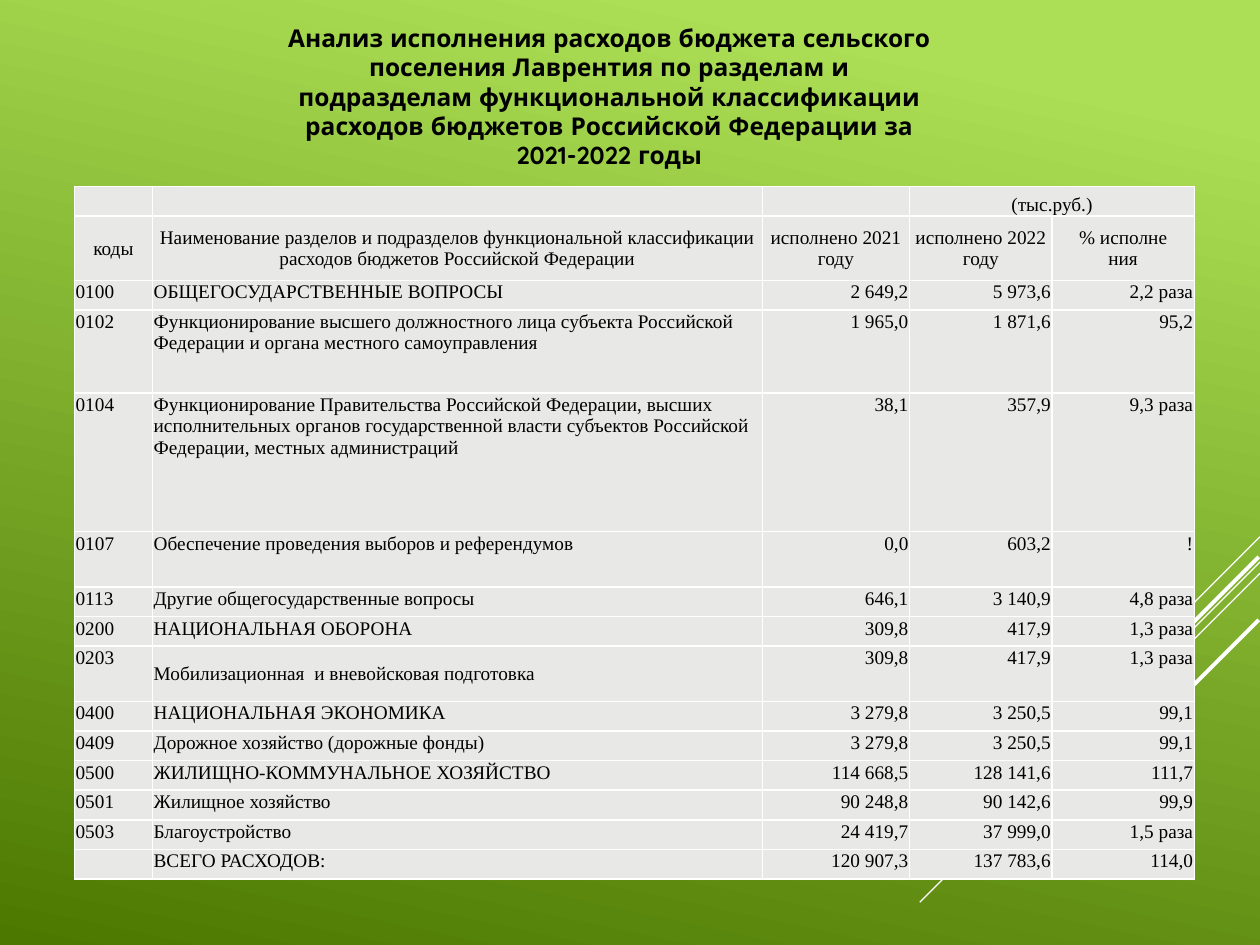
"""Build the budget expenditure slide with its title, diagonal accents and table."""
from dataclasses import dataclass

from lxml import etree
from pptx import Presentation
from pptx.dml.color import RGBColor
from pptx.enum.shapes import MSO_CONNECTOR
from pptx.enum.text import MSO_ANCHOR, MSO_AUTO_SIZE, PP_ALIGN
from pptx.oxml.ns import qn
from pptx.util import Inches, Pt

LEFT, CENTER, RIGHT, JUSTIFY = PP_ALIGN.LEFT, PP_ALIGN.CENTER, PP_ALIGN.RIGHT, PP_ALIGN.JUSTIFY
TOP, MIDDLE, BOTTOM = MSO_ANCHOR.TOP, MSO_ANCHOR.MIDDLE, MSO_ANCHOR.BOTTOM
STRAIGHT = MSO_CONNECTOR.STRAIGHT
GROW = MSO_AUTO_SIZE.SHAPE_TO_FIT_TEXT
TITLE_ONLY = 5
WIDTH, HEIGHT = 10, 7.5


@dataclass(frozen=True)
class Theme:
    light: str = "ACDF55"
    dark: str = "4C7800"
    cell: str = "E8E9E7"
    border: str = "FFFFFF"
    text: str = "000000"
    title_font: str = "Quicksand"
    table_font: str = "Times New Roman"
    title_size: int = 14
    table_size: int = 11
    border_width: int = 1


@dataclass(frozen=True)
class Diagonal:
    """A 45-degree line going down and left from its start, in inches."""
    x: float
    y: float
    run: float
    weight: float = 0.75


@dataclass(frozen=True)
class BudgetRow:
    code: str
    name: str
    year_2021: str
    year_2022: str
    percent: str
    height: float | None = None
    name_align: PP_ALIGN = LEFT
    name_anchor: MSO_ANCHOR = TOP

    @property
    def values(self) -> tuple[str, ...]:
        return self.code, self.name, self.year_2021, self.year_2022, self.percent


THEME = Theme()
TITLE = ("Анализ исполнения расходов бюджета сельского поселения Лаврентия по разделам и "
         "подразделам функциональной классификации расходов бюджетов Российской Федерации "
         "за 2021-2022 годы")
DIAGONALS = (
    Diagonal(10, 4.26, 0.83),
    Diagonal(10, 4.46, 2.7),
    Diagonal(10, 4.55, 1.72),
    Diagonal(9.99, 4.42, 1.57, 2.25),
    Diagonal(9.99, 4.92, 1.14, 2.25),
)
COLUMNS = (0.62, 4.84, 1.17, 1.13, 1.13)
TABLE_LEFT, TABLE_TOP, TABLE_HEIGHT = 0.59, 1.48, 5.5
UNIT_ROW = BudgetRow("", "", "", "(тыс.руб.)", "")
HEADER = BudgetRow(
    "коды",
    "Наименование разделов и подразделов функциональной классификации расходов бюджетов "
    "Российской Федерации",
    "исполнено 2021 году", "исполнено 2022 году", "% исполне\nния", 0.51)
BODY = (
    BudgetRow("0100", "ОБЩЕГОСУДАРСТВЕННЫЕ ВОПРОСЫ", "2 649,2", "5 973,6", "2,2 раза"),
    BudgetRow("0102", "Функционирование высшего должностного лица субъекта Российской "
              "Федерации и органа местного самоуправления", "1 965,0", "1 871,6", "95,2", 0.66),
    BudgetRow("0104", "Функционирование Правительства Российской Федерации, высших "
              "исполнительных органов государственной власти субъектов Российской Федерации, "
              "местных администраций", "38,1", "357,9", "9,3 раза", 1.1),
    BudgetRow("0107", "Обеспечение проведения выборов и референдумов", "0,0", "603,2", "!", 0.44),
    BudgetRow("0113", "Другие общегосударственные вопросы", "646,1", "3 140,9", "4,8 раза"),
    BudgetRow("0200", "НАЦИОНАЛЬНАЯ ОБОРОНА", "309,8", "417,9", "1,3 раза"),
    BudgetRow("0203", "Мобилизационная  и вневойсковая подготовка", "309,8", "417,9",
              "1,3 раза", 0.44, name_anchor=MIDDLE),
    BudgetRow("0400", "НАЦИОНАЛЬНАЯ ЭКОНОМИКА", "3 279,8", "3 250,5", "99,1"),
    BudgetRow("0409", "Дорожное хозяйство (дорожные фонды)", "3 279,8", "3 250,5", "99,1",
              name_align=JUSTIFY),
    BudgetRow("0500", "ЖИЛИЩНО-КОММУНАЛЬНОЕ ХОЗЯЙСТВО", "114 668,5", "128 141,6", "111,7"),
    BudgetRow("0501", "Жилищное хозяйство", "90 248,8", "90 142,6", "99,9"),
    BudgetRow("0503", "Благоустройство", "24 419,7", "37 999,0", "1,5 раза", name_align=JUSTIFY),
    BudgetRow("", "ВСЕГО РАСХОДОВ:", "120 907,3", "137 783,6", "114,0"),
)
ROWS = (UNIT_ROW, HEADER, *BODY)


def rgb(value: str) -> RGBColor:
    return RGBColor.from_string(value)


def add_run(paragraph, text: str, font: str, size: int, bold: bool = False) -> None:
    run = paragraph.add_run()
    run.text = text
    run.font.name = font
    run.font.size = Pt(size)
    run.font.bold = bold
    run.font.color.rgb = rgb(THEME.text)


def paint_background(slide) -> None:
    fill = slide.background.fill
    fill.gradient()
    fill.gradient_angle = 360 - 102
    stops = ((0.1, THEME.light), (1, THEME.dark))
    for stop, (position, color) in zip(fill.gradient_stops, stops):
        stop.position = position
        stop.color.rgb = rgb(color)


def format_title(slide) -> None:
    title = slide.shapes.title
    title.left, title.top = Inches(2.17), Inches(0.13)
    title.width, title.height = Inches(5.33), Inches(1.28)
    frame = title.text_frame
    frame.word_wrap = True
    frame.auto_size = GROW
    frame.vertical_anchor = TOP
    paragraph = frame.paragraphs[0]
    paragraph.alignment = CENTER
    add_run(paragraph, TITLE, THEME.title_font, THEME.title_size, bold=True)


def add_diagonal(slide, diagonal: Diagonal) -> None:
    x, y, run = diagonal.x, diagonal.y, diagonal.run
    connector = slide.shapes.add_connector(
        STRAIGHT, Inches(x), Inches(y), Inches(x - run), Inches(y + run))
    connector.line.color.rgb = rgb(THEME.border)
    connector.line.width = Pt(diagonal.weight)
    etree.SubElement(connector._element.spPr, qn("a:effectLst"))


def set_borders(cell) -> None:
    properties = cell._tc.get_or_add_tcPr()
    for position, side in enumerate(("a:lnL", "a:lnR", "a:lnT", "a:lnB")):
        line = etree.Element(qn(side), w=str(Pt(THEME.border_width)))
        fill = etree.SubElement(line, qn("a:solidFill"))
        etree.SubElement(fill, qn("a:srgbClr"), val=THEME.border)
        properties.insert(position, line)


def fill_cell(cell, text: str, align: PP_ALIGN, anchor: MSO_ANCHOR) -> None:
    cell.margin_left = cell.margin_right = cell.margin_top = Inches(0.01)
    cell.margin_bottom = 0
    cell.vertical_anchor = anchor
    cell.fill.solid()
    cell.fill.fore_color.rgb = rgb(THEME.cell)
    set_borders(cell)
    paragraph = cell.text_frame.paragraphs[0]
    paragraph.alignment = align
    if not text:
        paragraph._p.get_or_add_endParaRPr().set("sz", str(THEME.table_size * 100))
        return
    for index, part in enumerate(text.split("\n")):
        if index:
            paragraph.add_line_break()
        add_run(paragraph, part, THEME.table_font, THEME.table_size)


def cell_layout(row: BudgetRow, column: int) -> tuple[PP_ALIGN, MSO_ANCHOR]:
    if row is UNIT_ROW:
        return CENTER, BOTTOM
    if row is HEADER:
        return CENTER, MIDDLE
    if column == 1:
        return row.name_align, row.name_anchor
    return (RIGHT if column > 1 else LEFT), TOP


def add_budget_table(slide) -> None:
    table = slide.shapes.add_table(
        len(ROWS), len(COLUMNS), Inches(TABLE_LEFT), Inches(TABLE_TOP),
        Inches(sum(COLUMNS)), Inches(TABLE_HEIGHT)).table
    table.first_row = table.horz_banding = False
    for column, width in zip(table.columns, COLUMNS):
        column.width = Inches(width)
    fixed = [row.height for row in ROWS if row.height]
    single = (TABLE_HEIGHT - sum(fixed)) / (len(ROWS) - len(fixed))
    for row_index, row in enumerate(ROWS):
        table.rows[row_index].height = Inches(row.height or single)
        for column, text in enumerate(row.values):
            fill_cell(table.cell(row_index, column), text, *cell_layout(row, column))
    table.cell(0, 3).merge(table.cell(0, 4))


def main() -> None:
    presentation = Presentation()
    presentation.slide_width, presentation.slide_height = Inches(WIDTH), Inches(HEIGHT)
    slide = presentation.slides.add_slide(presentation.slide_layouts[TITLE_ONLY])
    paint_background(slide)
    for diagonal in DIAGONALS:
        add_diagonal(slide, diagonal)
    format_title(slide)
    add_budget_table(slide)
    presentation.save("out.pptx")


if __name__ == "__main__":
    main()
